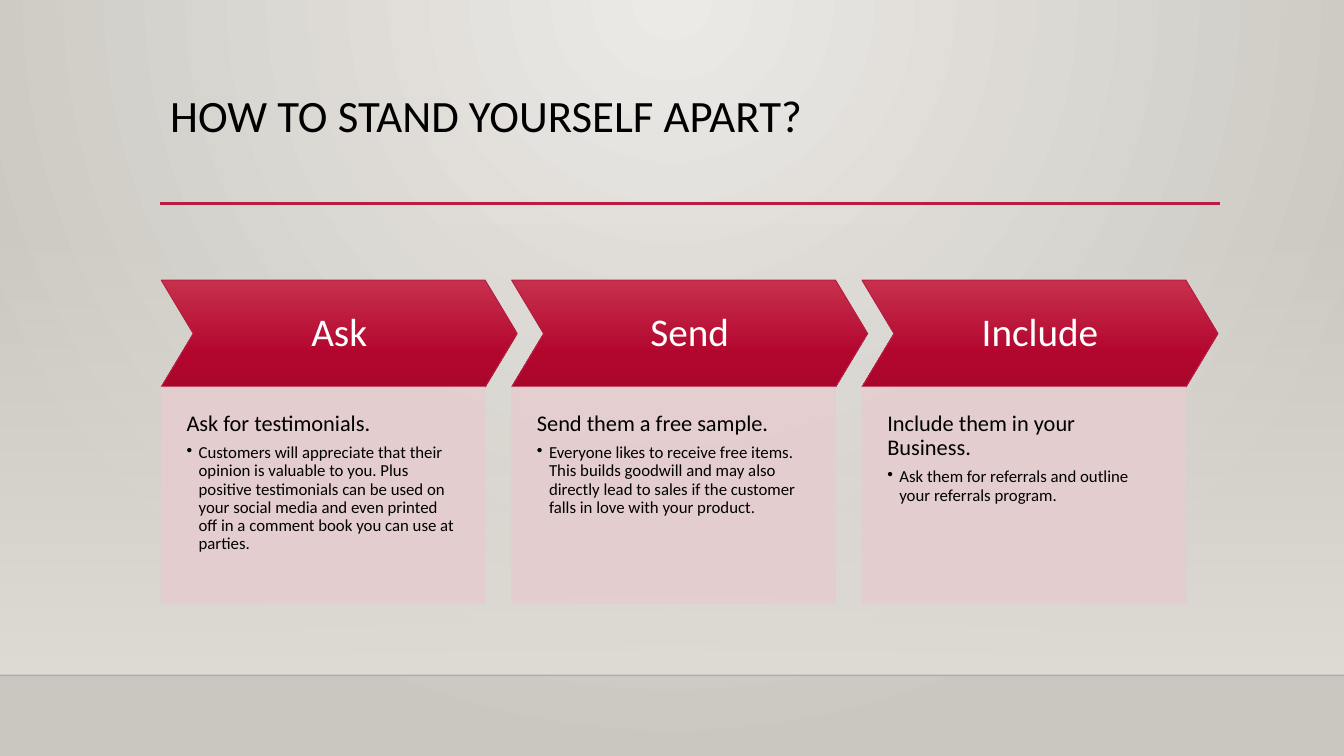
"""Build the "How to stand yourself apart?" slide with three chevron steps."""
import pptx
import pptx.util
from lxml import etree
from pptx.dml.color import RGBColor
from pptx.enum.shapes import MSO_CONNECTOR, MSO_SHAPE
from pptx.enum.text import MSO_ANCHOR, PP_ALIGN
from pptx.oxml.ns import qn
from pptx.util import Inches, Pt

BLACK = RGBColor(0x00, 0x00, 0x00)
WHITE = RGBColor(0xFF, 0xFF, 0xFF)
CRIMSON = RGBColor(0xB7, 0x1E, 0x42)
PINK = RGBColor(0xE6, 0xCD, 0xCF)
LIGHT_GREY = RGBColor(0xEC, 0xEA, 0xE7)
DARK_GREY = RGBColor(0xCA, 0xC7, 0xC1)
WALL = RGBColor(0xDF, 0xDB, 0xD5)
CHEVRON_STOPS = [(0, RGBColor(0xC7, 0x30, 0x4C), 100),
                 (69, RGBColor(0xB3, 0x06, 0x2F), 100),
                 (100, RGBColor(0xAA, 0x06, 0x2C), 100)]


def set_alpha(parent, percent):
    for color in parent.iter(qn("a:srgbClr")):
        etree.SubElement(color, qn("a:alpha"), val=str(percent * 1000))


def set_gradient(parent, stops, circle=False):
    grad = next(parent.iter(qn("a:gradFill")))
    for child in list(grad):
        grad.remove(child)
    stop_list = etree.SubElement(grad, qn("a:gsLst"))
    for position, color, alpha in stops:
        stop = etree.SubElement(stop_list, qn("a:gs"), pos=str(position * 1000))
        etree.SubElement(stop, qn("a:srgbClr"), val=str(color))
        set_alpha(stop, alpha)
    if circle:
        shade = etree.SubElement(grad, qn("a:path"), path="circle")
        etree.SubElement(shade, qn("a:fillToRect"), l="43000", t="0", r="43000", b="100000")
    else:
        etree.SubElement(grad, qn("a:lin"), ang="5400000", scaled="0")


prs = pptx.Presentation()
prs.slide_width, prs.slide_height = Inches(13.33), Inches(7.5)
s = prs.slides.add_slide(prs.slide_layouts[6])
s.background.fill.gradient()
set_gradient(s.element, [(0, LIGHT_GREY, 100), (100, DARK_GREY, 100)], circle=True)

wall = s.shapes.add_shape(MSO_SHAPE.RECTANGLE, 0, Inches(2.21), Inches(13.33), Inches(4.49))
wall.shadow.inherit = False
wall.line.fill.background()
wall.fill.gradient()
set_gradient(wall.element.spPr, [(0, WALL, 0), (100, WALL, 100)])

for left, right, y, color, width, alpha in [(0, 13.33, 6.7, BLACK, 1, 20),
                                            (1.59, 12.1, 2.02, CRIMSON, 2.5, 100)]:
    rule = s.shapes.add_connector(MSO_CONNECTOR.STRAIGHT, Inches(left), Inches(y),
                                  Inches(right), Inches(y))
    rule.line.color.rgb = color
    rule.line.width = Pt(width)
    set_alpha(rule.element.spPr, alpha)
    etree.SubElement(rule.element.spPr, qn("a:effectLst"))

title = s.shapes.add_textbox(Inches(1.59), Inches(0.88), Inches(10.5), Inches(1.15))
title.text_frame.word_wrap = True
p = title.text_frame.paragraphs[0]
p.line_spacing = 0.9
r = p.add_run()
r.text = "HOW TO STAND YOURSELF APART?"
for name, value in {"name": "Calibri", "size": Pt(32)}.items():
    setattr(r.font, name, value)
r.font.color.rgb = BLACK

steps = [
    ("Ask", "Ask for testimonials.",
     "Customers will appreciate that their opinion is valuable to you. Plus positive "
     "testimonials can be used on your social media and even printed off in a comment "
     "book you can use at parties."),
    ("Send", "Send them a free sample.",
     "Everyone likes to receive free items. This builds goodwill and may also directly "
     "lead to sales if the customer falls in love with your product."),
    ("Include", "Include them in your Business.",
     "Ask them for referrals and outline your referrals program."),
]
for i, (step, heading, detail) in enumerate(steps):
    left = Inches(1.6 + i * 6.95 / 2)

    chevron = s.shapes.add_shape(MSO_SHAPE.CHEVRON, left, Inches(2.78), Inches(3.53), Inches(1.06))
    chevron.adjustments[0] = 0.3
    chevron.fill.gradient()
    set_gradient(chevron.element.spPr, CHEVRON_STOPS)
    chevron.line.color.rgb = CRIMSON

    panel = s.shapes.add_shape(MSO_SHAPE.RECTANGLE, left, Inches(3.84), Inches(3.21), Inches(2.14))
    panel.fill.solid()
    panel.fill.fore_color.rgb = PINK
    panel.line.color.rgb = PINK
    set_alpha(panel.element.spPr, 90)

    for sp, anchor, inset, bottom, texts in [
        (chevron, MSO_ANCHOR.MIDDLE, 0.13, 0.13, [(step, 28, WHITE, PP_ALIGN.CENTER, 0)]),
        (panel, MSO_ANCHOR.TOP, 0.25, 0.51, [(heading, 16, BLACK, PP_ALIGN.LEFT, 5.6),
                                             (detail, 12, BLACK, PP_ALIGN.LEFT, 1.8)]),
    ]:
        sp.shadow.inherit = False
        sp.line.width = Pt(0.75)
        tf = sp.text_frame
        frame_format = {"word_wrap": True, "vertical_anchor": anchor,
                        "margin_left": Inches(inset), "margin_right": Inches(inset),
                        "margin_top": Inches(inset), "margin_bottom": Inches(bottom)}
        for name, value in frame_format.items():
            setattr(tf, name, value)
        for n, (text, size, color, align, after) in enumerate(texts):
            p = tf.add_paragraph() if n else tf.paragraphs[0]
            if n:
                p.level = 1
                pPr = p._p.get_or_add_pPr()
                pPr.set("marL", str(Inches(0.12)))
                pPr.set("indent", str(-Inches(0.12)))
                etree.SubElement(pPr, qn("a:buChar"), char="•")
            for name, value in {"alignment": align, "line_spacing": 0.9,
                                "space_after": Pt(after)}.items():
                setattr(p, name, value)
            r = p.add_run()
            r.text = text
            for name, value in {"name": "Calibri", "size": Pt(size)}.items():
                setattr(r.font, name, value)
            r.font.color.rgb = color

prs.save("out.pptx")
